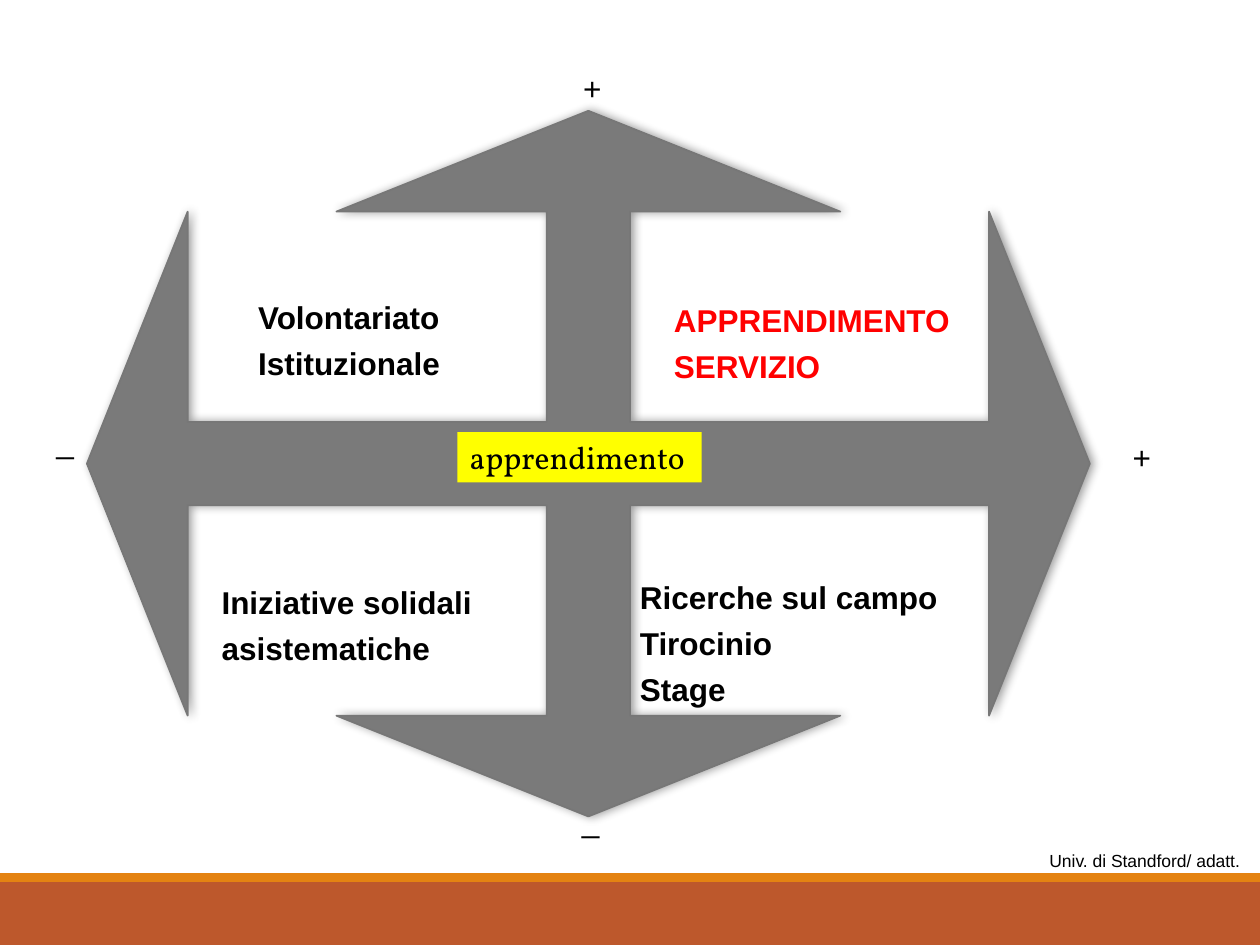
from pptx import Presentation
from pptx.dml.color import RGBColor
from pptx.enum.shapes import MSO_SHAPE
from pptx.enum.text import MSO_ANCHOR, MSO_AUTO_SIZE, PP_ALIGN
from pptx.oxml import parse_xml
from pptx.oxml.ns import nsdecls, qn
from pptx.util import Inches, Pt

COLORS = {
    "rust": "BD582C",
    "orange": "E48312",
    "gray": "7A7A7A",
    "edge": "777777",
    "yellow": "FFFF00",
    "red": "FF0000",
    "black": "000000",
}


class Deck:
    font = "Arial"
    size = 18
    space = 4.5

    def __init__(self, prs):
        self.slide = prs.slides.add_slide(prs.slide_layouts[6])

    def color(self, name):
        return RGBColor.from_string(COLORS[name])

    def fill(self, sp, name):
        sp.fill.solid()
        sp.fill.fore_color.rgb = self.color(name)

    def rect(self, x, y, w, h, fill):
        sp = self.slide.shapes.add_shape(
            MSO_SHAPE.RECTANGLE, Inches(x), Inches(y), Inches(w), Inches(h))
        sp.shadow.inherit = False
        self.fill(sp, fill)
        sp.line.fill.background()
        return sp

    def set_text(self, sp, lines, color="black", size=None, font=None,
                 bold=False, wrap=False):
        tf = sp.text_frame
        tf.word_wrap = wrap
        tf.auto_size = MSO_AUTO_SIZE.NONE if wrap else MSO_AUTO_SIZE.SHAPE_TO_FIT_TEXT
        tf.vertical_anchor = MSO_ANCHOR.TOP
        for i, line in enumerate(lines):
            p = tf.add_paragraph() if i else tf.paragraphs[0]
            p.text = line
            p.alignment = PP_ALIGN.LEFT
            if i:
                p.space_before = Pt(self.space)
            p.font.name = font or self.font
            p.font.size = Pt(size or self.size)
            p.font.bold = bold
            p.font.color.rgb = self.color(color)

    def text(self, x, y, w, h, lines, **style):
        sp = self.slide.shapes.add_textbox(
            Inches(x), Inches(y), Inches(w), Inches(h))
        self.set_text(sp, lines, **style)

    def quad_arrow(self, cx, cy, half_w, half_h, shaft, head, depth):
        neck_x, neck_y = half_w - depth, half_h - depth
        quarter = [(0, -half_h), (head, -neck_y), (shaft, -neck_y),
                   (shaft, -shaft), (neck_x, -shaft), (neck_x, -head),
                   (half_w, 0)]
        right = quarter + [(x, -y) for x, y in quarter[-2::-1]]
        outline = right + [(-x, y) for x, y in right[-2:0:-1]]
        points = [(Inches(cx + x), Inches(cy + y)) for x, y in outline]
        builder = self.slide.shapes.build_freeform(*points[0], scale=1.0)
        builder.add_line_segments(points[1:], close=True)
        sp = builder.convert_to_shape()
        self.fill(sp, "gray")
        sp.line.color.rgb = self.color("edge")
        sp.line.width = Pt(1)
        sp.shadow.inherit = False
        effects = sp._element.spPr.find(qn("a:effectLst"))
        effects.append(parse_xml(
            f'<a:outerShdw {nsdecls("a")} blurRad="{Pt(5)}" dist="{Pt(1.8)}" '
            f'dir="0" rotWithShape="0"><a:srgbClr val="{COLORS["black"]}">'
            '<a:alpha val="40000"/></a:srgbClr></a:outerShdw>'))


def main():
    prs = Presentation()
    prs.slide_width, prs.slide_height = Inches(10), Inches(7.5)
    deck = Deck(prs)

    deck.rect(0, 7, 10, 0.5, "rust")
    deck.rect(0, 6.93, 10, 0.07, "orange")
    deck.quad_arrow(4.67, 3.68, half_w=3.98, half_h=2.8,
                    shaft=0.33, head=2, depth=0.8)

    quadrants = [
        (5.25, 2.34, 2.41, 0.77, ["APPRENDIMENTO", "SERVIZIO"], "red"),
        (1.95, 2.32, 1.68, 0.77, ["Volontariato", "Istituzionale"], "black"),
        (1.66, 4.58, 2.21, 0.77, ["Iniziative solidali", "asistematiche"], "black"),
        (4.98, 4.54, 2.59, 1.13, ["Ricerche sul campo", "Tirocinio", "Stage"], "black"),
    ]
    for x, y, w, h, lines, color in quadrants:
        deck.text(x, y, w, h, lines, color=color, bold=True)

    signs = [(4.53, 0.5, 0.36, "+"), (4.52, 6.31, 0.34, "_"),
             (8.89, 3.43, 0.36, "+"), (0.35, 3.3, 0.34, "_")]
    for x, y, w, sign in signs:
        deck.text(x, y, w, 0.4, [sign])

    deck.text(8.23, 6.7, 2.02, 0.31, ["Univ. di Standford/ adatt."],
              size=10, wrap=True)
    label = deck.rect(3.63, 3.43, 1.94, 0.4, "yellow")
    deck.set_text(label, ["apprendimento"], font="Vollkorn")

    prs.save("out.pptx")


if __name__ == "__main__":
    main()
